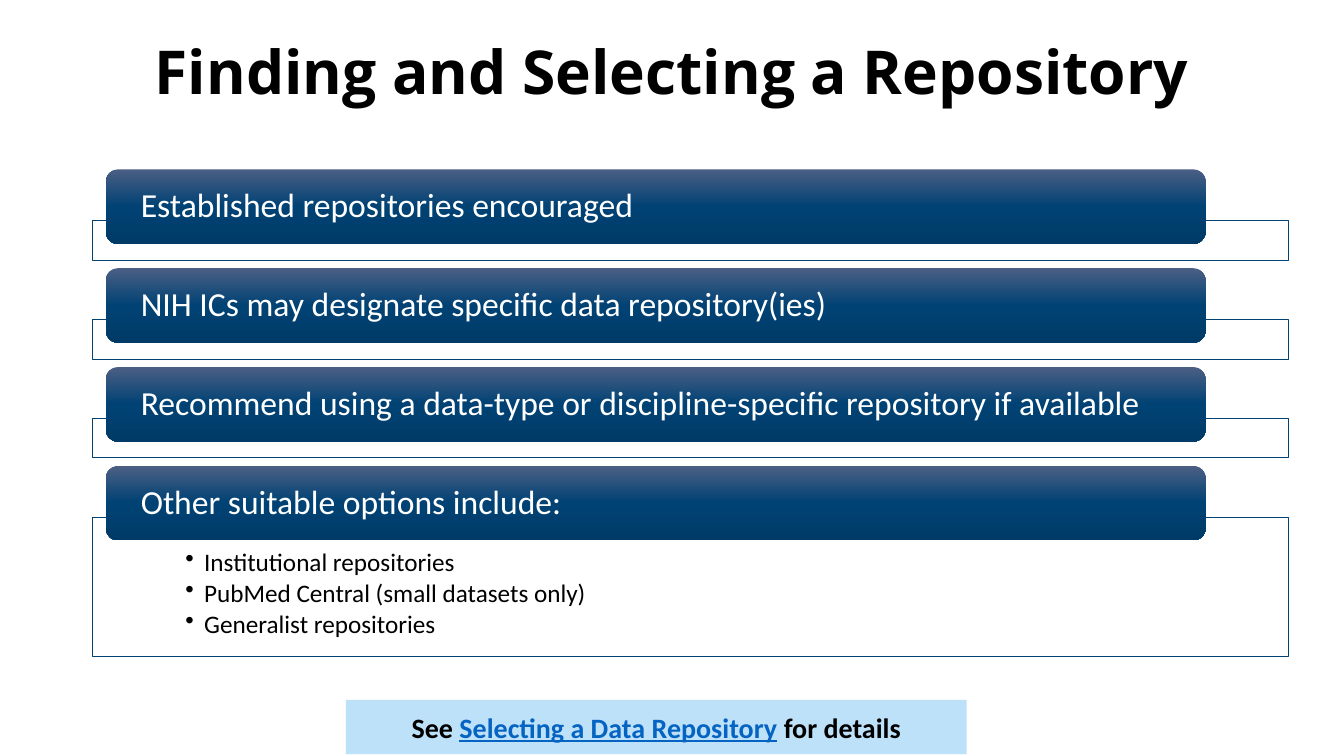
from lxml import etree
from pptx import Presentation
from pptx import util as u
from pptx.dml.color import RGBColor
from pptx.enum import shapes, text
from pptx.oxml import parse_xml
from pptx.oxml.ns import nsdecls, qn

Pt = u.Pt
COLORS = {
    "black": "000000", "white": "FFFFFF", "frame": "014273", "link": "0563C1",
    "callout": "93CEF7", "bar_top": "4B5F84", "bar_mid": "004274", "bar_end": "003B67",
}
SECTIONS = [
    ("Established repositories encouraged", []),
    ("NIH ICs may designate specific data repository(ies)", []),
    ("Recommend using a data-type or discipline-specific repository if available", []),
    ("Other suitable options include:", [
        "Institutional repositories",
        "PubMed Central (small datasets only)",
        "Generalist repositories",
    ]),
]
FIRST_TOP, PITCH, BAR_HEIGHT, FRAME_DROP = 121, 70.6, 53.3, 36.7


def rgb(name):
    return RGBColor.from_string(COLORS[name])


def add_bullet(paragraph, indent):
    props = paragraph._p.get_or_add_pPr()
    props.set("marL", str(Pt(indent)))
    props.set("indent", str(-Pt(indent)))
    etree.SubElement(props, qn("a:buChar")).set("char", "•")


def write(frame, paragraphs, size, color="black", font="Calibri", bold=False,
          align=text.PP_ALIGN.LEFT, anchor=text.MSO_ANCHOR.MIDDLE,
          insets=(0, 0, 0, 0), line=1.0, after=0, bullet_indent=0):
    """Each paragraph is a list of (words, run overrides)."""
    frame.word_wrap = True
    frame.auto_size = text.MSO_AUTO_SIZE.NONE
    frame.vertical_anchor = anchor
    (frame.margin_left, frame.margin_top,
     frame.margin_right, frame.margin_bottom) = map(Pt, insets)
    for i, runs in enumerate(paragraphs):
        paragraph = frame.add_paragraph() if i else frame.paragraphs[0]
        if bullet_indent:
            add_bullet(paragraph, bullet_indent)
        paragraph.alignment = align
        paragraph.line_spacing = line
        paragraph.space_before = Pt(0)
        paragraph.space_after = Pt(after)
        for words, override in runs:
            run = paragraph.add_run()
            run.text = words
            run.font.name, run.font.size, run.font.bold = font, Pt(size), bold
            run.font.color.rgb = rgb(override.get("color", color))
            if override.get("underline"):
                run.font.underline = True


def add_box(slide, kind, left, top, width, height, fill=None, opacity=100, line=None):
    box = slide.shapes.add_shape(kind, Pt(left), Pt(top), Pt(width), Pt(height))
    box.shadow.inherit = False
    if fill:
        box.fill.solid()
        box.fill.fore_color.rgb = rgb(fill)
        tone = box._element.spPr.find(qn("a:solidFill"))[0]
        etree.SubElement(tone, qn("a:alpha")).set("val", str(opacity * 1000))
    if line:
        box.line.color.rgb = rgb(line)
        box.line.width = Pt(0.5)
    else:
        box.line.fill.background()
    return box


def shade_downward(box, stops):
    marks = "".join(f'<a:gs pos="{pos * 1000}"><a:srgbClr val="{COLORS[name]}"/></a:gs>'
                    for pos, name in stops)
    gradient = parse_xml(f'<a:gradFill {nsdecls("a")}><a:gsLst>{marks}</a:gsLst>'
                         '<a:lin ang="5400000" scaled="0"/></a:gradFill>')
    box._element.spPr.find(qn("a:prstGeom")).addnext(gradient)


def add_section(slide, top, heading, options):
    frame = add_box(slide, shapes.MSO_SHAPE.RECTANGLE, 66.2, top + FRAME_DROP, 853.9,
                    99.4 if options else 28.1, "white", 90, "frame")
    if options:
        write(frame.text_frame, [[(option, {})] for option in options], 18,
              anchor=text.MSO_ANCHOR.TOP, insets=(66.2, 23, 66.2, 10),
              line=0.9, after=2.7, bullet_indent=13.5)
    bar = add_box(slide, shapes.MSO_SHAPE.ROUNDED_RECTANGLE, 75.6, top, 785.5, BAR_HEIGHT)
    shade_downward(bar, [(0, "bar_top"), (50, "bar_mid"), (100, "bar_end")])
    write(bar.text_frame, [[(heading, {})]], 24, "white",
          insets=(22.4, 0, 22.4, 0), line=0.9)


def main():
    deck = Presentation()
    deck.slide_width, deck.slide_height = Pt(960), Pt(540)
    slide = deck.slides.add_slide(deck.slide_layouts[5])

    # Title
    title = slide.shapes.title
    title.left, title.top, title.width, title.height = map(Pt, (66, 1.4, 828, 104.4))
    write(title.text_frame, [[("Finding and Selecting a Repository", {})]], 43.2,
          font="Open Sans", bold=True, align=text.PP_ALIGN.CENTER,
          insets=(7.2, 3.6, 7.2, 3.6), line=0.9)

    # Headed sections
    for i, (heading, options) in enumerate(SECTIONS):
        add_section(slide, FIRST_TOP + i * PITCH, heading, options)

    # Pointer to further details
    callout = add_box(slide, shapes.MSO_SHAPE.RECTANGLE, 247, 499.9, 443.5, 38.8,
                      "callout", 60)
    write(callout.text_frame,
          [[("See ", {}),
            ("Selecting a Data Repository", {"color": "link", "underline": True}),
            (" for details", {})]],
          20, bold=True, align=text.PP_ALIGN.CENTER, insets=(7.2, 7.2, 7.2, 7.2))

    deck.save("out.pptx")


if __name__ == "__main__":
    main()
